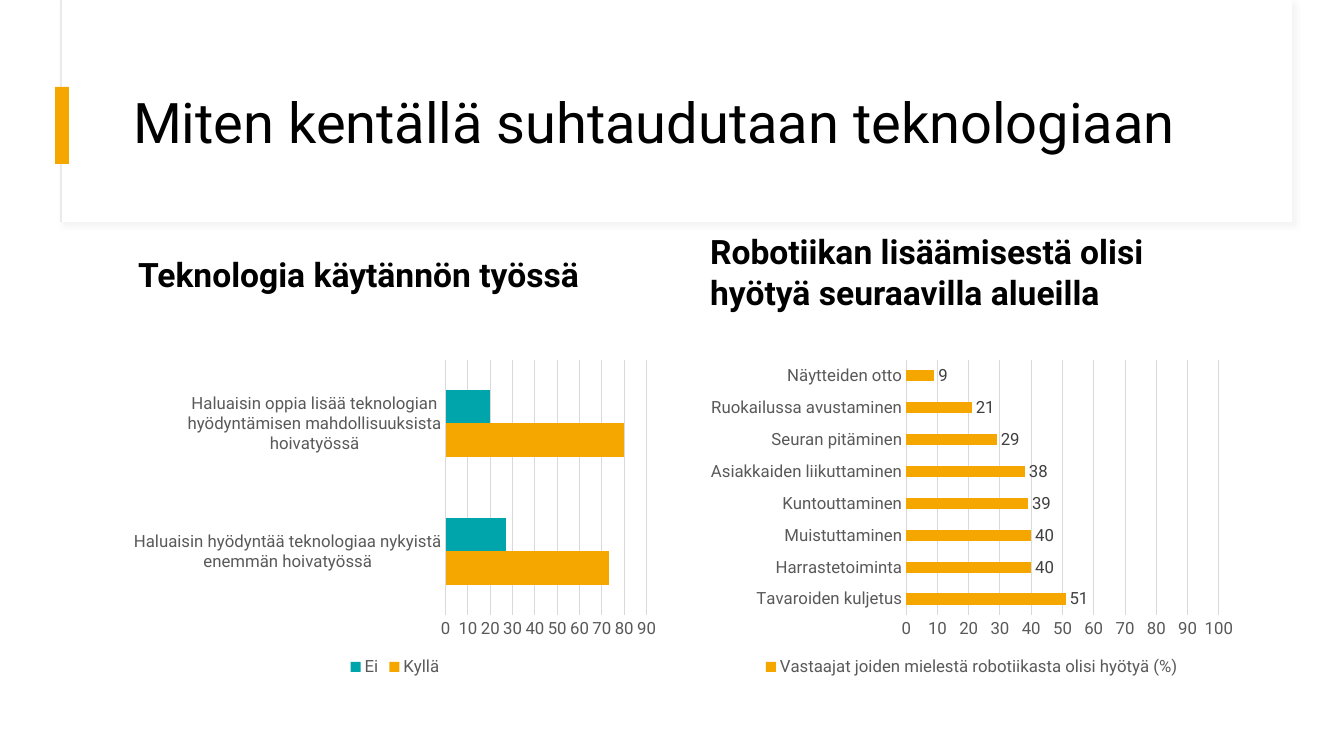
from lxml import etree
from pptx import Presentation
from pptx import util as u
from pptx.chart import data as chart_data
from pptx.dml.color import RGBColor
from pptx.enum import chart as ch, shapes, text
from pptx.oxml import ns

SCALE = 914400 / 100.8
FONT = "Roboto"
BLACK = RGBColor(0x00, 0x00, 0x00)
WHITE = RGBColor(0xFF, 0xFF, 0xFF)
AMBER = RGBColor(0xF5, 0xA7, 0x00)
TEAL = RGBColor(0x00, 0xA5, 0xAB)
GREY = RGBColor(0x59, 0x59, 0x59)
DARK = RGBColor(0x40, 0x40, 0x40)
PALE = RGBColor(0xD9, 0xD9, 0xD9)
EDGE = RGBColor(0xE9, 0xE9, 0xE9)


def px(*lengths):
    """Turn pixel lengths into EMU."""
    return [u.Emu(round(length * SCALE)) for length in lengths]


class SlideBuilder:
    """Holds the text style and the current slide, and adds elements to it."""

    def __init__(self, deck):
        self.page = deck.slides.add_slide(deck.slide_layouts[4])

    def style(self, font, size, colour, bold=False):
        font.name = FONT
        font.size = u.Pt(size)
        font.color.rgb = colour
        font.bold = bold

    def rectangle(self, box, fill, line=None):
        shape = self.page.shapes.add_shape(shapes.MSO_SHAPE.RECTANGLE, *px(*box))
        shape.shadow.inherit = False
        shape.fill.solid()
        shape.fill.fore_color.rgb = fill
        if line is None:
            shape.line.fill.background()
        else:
            shape.line.color.rgb = line
            shape.line.width = u.Pt(0.75)
        return shape

    def soft_shadow(self, shape):
        effects = shape._element.spPr.find(ns.qn("a:effectLst"))
        shadow = etree.SubElement(effects, ns.qn("a:outerShdw"), blurRad=str(u.Pt(4)),
                                  dist=str(u.Pt(3)), dir=str(45 * 60000))
        colour = etree.SubElement(shadow, ns.qn("a:srgbClr"), val=str(PALE))
        etree.SubElement(colour, ns.qn("a:alpha"), val="30000")

    def placeholder(self, index, words, box, size, anchor, bold=False, before=0, spacing=1.0):
        holder = self.page.placeholders[index]
        self.page.shapes._spTree.append(holder._element)
        holder.left, holder.top, holder.width, holder.height = px(*box)
        frame = holder.text_frame
        frame.word_wrap = True
        frame.auto_size = text.MSO_AUTO_SIZE.NONE
        frame.vertical_anchor = anchor
        para = frame.paragraphs[0]
        para.alignment = text.PP_ALIGN.LEFT
        para.space_before = u.Pt(before)
        para.line_spacing = spacing
        span = para.add_run()
        span.text = words
        self.style(span.font, size, BLACK, bold)

    def bar_chart(self, box, categories, series, maximum, labels=False):
        data = chart_data.CategoryChartData()
        data.categories = categories
        for name, values, _ in series:
            data.add_series(name, values)
        chart = self.page.shapes.add_chart(
            ch.XL_CHART_TYPE.BAR_CLUSTERED, *px(*box), data).chart
        self.style(chart.font, 10, BLACK)
        chart.has_title = False
        chart.has_legend = True
        chart.legend.position = ch.XL_LEGEND_POSITION.BOTTOM
        chart.legend.include_in_layout = False
        self.style(chart.legend.font, 12, GREY)
        for axis in (chart.category_axis, chart.value_axis):
            axis.major_tick_mark = axis.minor_tick_mark = ch.XL_TICK_MARK.NONE
            self.style(axis.tick_labels.font, 12, GREY)
        values_axis = chart.value_axis
        values_axis.minimum_scale, values_axis.maximum_scale = 0, maximum
        values_axis.major_unit = 10
        values_axis.has_major_gridlines = True
        values_axis.format.line.fill.background()
        for line in (chart.category_axis.format.line, values_axis.major_gridlines.format.line):
            line.color.rgb = PALE
            line.width = u.Pt(0.75)
        plot = chart.plots[0]
        plot.gap_width = 182
        plot.vary_by_categories = False
        for bars, (_, _, colour) in zip(plot.series, series):
            bars.format.fill.solid()
            bars.format.fill.fore_color.rgb = colour
        if labels:
            plot.has_data_labels = True
            plot.data_labels.show_value = True
            plot.data_labels.position = ch.XL_LABEL_POSITION.OUTSIDE_END
            self.style(plot.data_labels.font, 12, DARK)

    def remove_empty_placeholders(self):
        for holder in list(self.page.placeholders):
            if not holder.text_frame.text:
                holder._element.getparent().remove(holder._element)


def main():
    deck = Presentation()
    deck.slide_width, deck.slide_height = px(1344, 756)
    slide = SlideBuilder(deck)

    panel = slide.rectangle((61, 0, 1231, 222), WHITE, EDGE)
    slide.soft_shadow(panel)
    slide.rectangle((62, 0, 1230, 222), WHITE)
    slide.rectangle((55, 87, 14, 77), AMBER)
    slide.placeholder(0, "Miten kentällä suhtaudutaan teknologiaan", (123, 60, 1121, 130),
                      40, text.MSO_ANCHOR.MIDDLE, spacing=0.9)

    headings = [
        (1, "Teknologia käytännön työssä", (128, 208, 544, 91)),
        (3, "Robotiikan lisäämisestä olisi hyötyä seuraavilla alueilla", (700, 226, 544, 91)),
    ]
    for index, words, box in headings:
        slide.placeholder(index, words, box, 24, text.MSO_ANCHOR.BOTTOM, bold=True, before=10)

    slide.bar_chart(
        (123, 353, 544, 328),
        ["Haluaisin hyödyntää teknologiaa nykyistä enemmän hoivatyössä",
         "Haluaisin oppia lisää teknologian hyödyntämisen mahdollisuuksista hoivatyössä"],
        [("Kyllä", (73, 80), AMBER), ("Ei", (27, 20), TEAL)], 90)
    slide.bar_chart(
        (700, 353, 544, 328),
        ["Tavaroiden kuljetus", "Harrastetoiminta", "Muistuttaminen", "Kuntouttaminen",
         "Asiakkaiden liikuttaminen", "Seuran pitäminen", "Ruokailussa avustaminen",
         "Näytteiden otto"],
        [("Vastaajat joiden mielestä robotiikasta olisi hyötyä (%)",
          (51, 40, 40, 39, 38, 29, 21, 9), AMBER)], 100, labels=True)

    slide.remove_empty_placeholders()
    deck.save("out.pptx")


if __name__ == "__main__":
    main()
